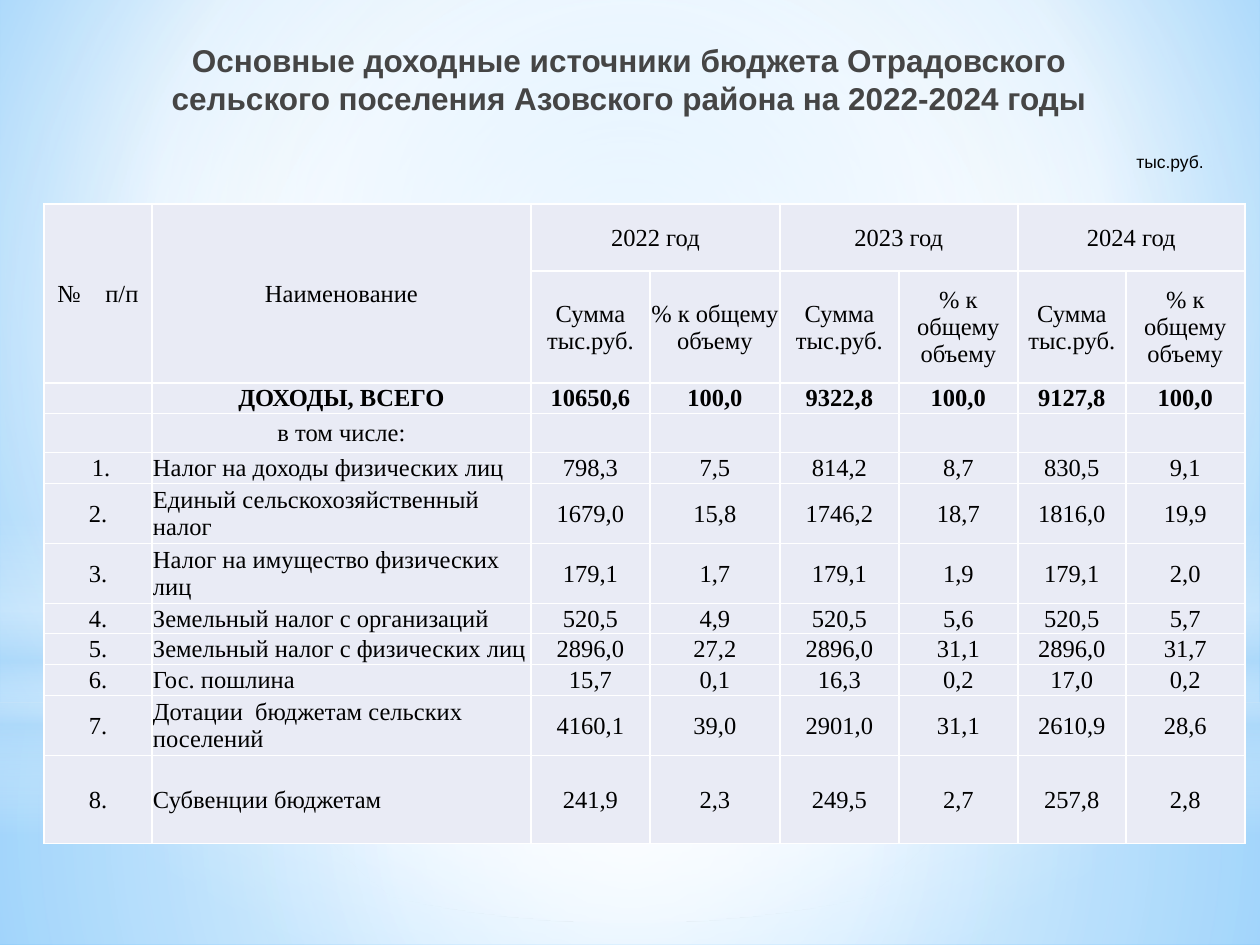
from lxml import etree
from pptx import Presentation
from pptx import util as u
from pptx.dml.color import RGBColor
from pptx.enum import shapes, text
from pptx.oxml.ns import qn

PX = 914400 // 126


def rgb(value):
    return RGBColor.from_string(value)


def gradient(fill, owner, stops, focus=None):
    """Fill with (position, colour, opacity) stops, radial round focus or top-down."""
    fill.gradient()
    grad = owner.find(".//" + qn("a:gradFill"))
    for child in list(grad):
        grad.remove(child)
    gs_list = etree.SubElement(grad, qn("a:gsLst"))
    for pos, color, opacity in stops:
        gs = etree.SubElement(gs_list, qn("a:gs"), pos=str(pos * 1000))
        clr = etree.SubElement(gs, qn("a:srgbClr"), val=color)
        if opacity < 100:
            etree.SubElement(clr, qn("a:alpha"), val=str(opacity * 1000))
    if focus:
        radial = etree.SubElement(grad, qn("a:path"), {"path": "circle"})
        sides = {side: str(n * 1000) for side, n in zip("ltrb", focus)}
        etree.SubElement(radial, qn("a:fillToRect"), sides)
    else:
        etree.SubElement(grad, qn("a:lin"), ang="5400000", scaled="0")


prs = Presentation()
prs.slide_width, prs.slide_height = u.Inches(10), u.Inches(7.5)
s = prs.slides.add_slide(prs.slide_layouts[6])

# Sky background and its translucent layers
gradient(s.background.fill, s.element,
         [(0, "9ED5FF", 100), (60, "FFFFFF", 100), (100, "5BB9FF", 100)],
         (20, 10, 20, 60))
RECT, OVAL = shapes.MSO_SHAPE.RECTANGLE, shapes.MSO_SHAPE.OVAL
CENTRE = (50, 50, 50, 50)
layers = [
    (RECT, 703, 242, CENTRE,
     [(0, "FFFFFF", 91), (37, "FFFFFF", 76), (100, "B4DCFA", 79)]),
    (RECT, 0, 703, CENTRE,
     [(0, "FFFFFF", 89), (48, "FFFFFF", 62), (100, "B4DCFA", 79)]),
    (RECT, 519, 315, None,
     [(0, "FFFFFF", 0), (29, "FFFFFF", 30), (45, "B4DCFA", 40),
      (55, "FFFFFF", 26), (65, "B4DCFA", 60), (100, "FFFFFF", 0)]),
    (OVAL, 220, 703, CENTRE, [(0, "FFFFFF", 100), (56, "FFFFFF", 0)]),
]
for kind, top, height, focus, stops in layers:
    sp = s.shapes.add_shape(kind, 0, top * PX, prs.slide_width, height * PX)
    sp.shadow.inherit = False
    sp.line.fill.background()
    gradient(sp.fill, sp.element, stops, focus)

# Title and unit of measure
captions = [
    ("Основные доходные источники бюджета Отрадовского сельского поселения "
     "Азовского района на 2022-2024 годы",
     (152, 35, 954, 158), 18, True, "454545", text.PP_ALIGN.CENTER),
    ("тыс.руб.", (998, 145, 218, 34), 10, False, "000000", text.PP_ALIGN.RIGHT),
]
for caption, box, size, bold, color, align in captions:
    tf = s.shapes.add_textbox(*(n * PX for n in box)).text_frame
    tf.word_wrap = True
    p = tf.paragraphs[0]
    p.text, p.alignment = caption, align
    p.font.name, p.font.size, p.font.bold = "Arial", u.Pt(size), bold
    p.font.color.rgb = rgb(color)

# Income table
widths = [108, 379, 119, 130, 119, 119, 108, 119]
heights = [67, 112, 30, 39, 31, 60, 60, 30, 31, 31, 60, 88]
rows = [
    ["№    п/п", "Наименование", "2022 год", "", "2023 год", "", "2024 год", ""],
    ["", ""] + ["Сумма тыс.руб.", "% к общему объему"] * 3,
    ["", "ДОХОДЫ, ВСЕГО", "10650,6", "100,0", "9322,8", "100,0", "9127,8", "100,0"],
    ["", "в том числе:"] + [""] * 6,
    [" 1.", "Налог на доходы физических лиц",
     "798,3", "7,5", "814,2", "8,7", "830,5", "9,1"],
    ["2.", "Единый сельскохозяйственный налог",
     "1679,0", "15,8", "1746,2", "18,7", "1816,0", "19,9"],
    ["3.", "Налог на имущество физических лиц",
     "179,1", "1,7", "179,1", "1,9", "179,1", "2,0"],
    ["4.", "Земельный налог с организаций",
     "520,5", "4,9", "520,5", "5,6", "520,5", "5,7"],
    ["5.", "Земельный налог с физических лиц",
     "2896,0", "27,2", "2896,0", "31,1", "2896,0", "31,7"],
    ["6.", "Гос. пошлина", "15,7", "0,1", "16,3", "0,2", "17,0", "0,2"],
    ["7.", "Дотации  бюджетам сельских поселений",
     "4160,1", "39,0", "2901,0", "31,1", "2610,9", "28,6"],
    ["8.", "Субвенции бюджетам", "241,9", "2,3", "249,5", "2,7", "257,8", "2,8"],
]
TOTAL_ROW, FIRST_ITEM_ROW, NAME_COL = 2, 4, 1

table = s.shapes.add_table(len(rows), len(widths), 44 * PX, 204 * PX,
                           sum(widths) * PX, sum(heights) * PX).table
for column, width in zip(table.columns, widths):
    column.width = width * PX
for row, height in zip(table.rows, heights):
    row.height = height * PX

for i, values in enumerate(rows):
    for j, value in enumerate(values):
        cell = table.cell(i, j)
        cell.margin_left = cell.margin_right = cell.margin_top = PX
        cell.margin_bottom = 0
        cell.vertical_anchor = text.MSO_ANCHOR.MIDDLE
        p = cell.text_frame.paragraphs[0]
        is_name = i >= FIRST_ITEM_ROW and j == NAME_COL
        p.alignment = text.PP_ALIGN.LEFT if is_name else text.PP_ALIGN.CENTER
        p.font.name, p.font.size = "Times New Roman", u.Pt(14)
        p.font.bold = i == TOTAL_ROW
        p.font.color.rgb = rgb("000000")
        if value:
            p.text = value
        else:
            etree.SubElement(p._p, qn("a:endParaRPr"), sz="1400")
        tc_pr = cell._tc.get_or_add_tcPr()
        for side in ("a:lnL", "a:lnR", "a:lnT", "a:lnB"):
            ln = etree.SubElement(tc_pr, qn(side), w=str(u.Pt(1)))
            solid = etree.SubElement(ln, qn("a:solidFill"))
            etree.SubElement(solid, qn("a:srgbClr"), val="FFFFFF")
        cell.fill.solid()
        cell.fill.fore_color.rgb = rgb("E9EBF5")

for j in (0, 1):
    table.cell(0, j).merge(table.cell(1, j))
for j in (2, 4, 6):
    table.cell(0, j).merge(table.cell(0, j + 1))

prs.save("out.pptx")
